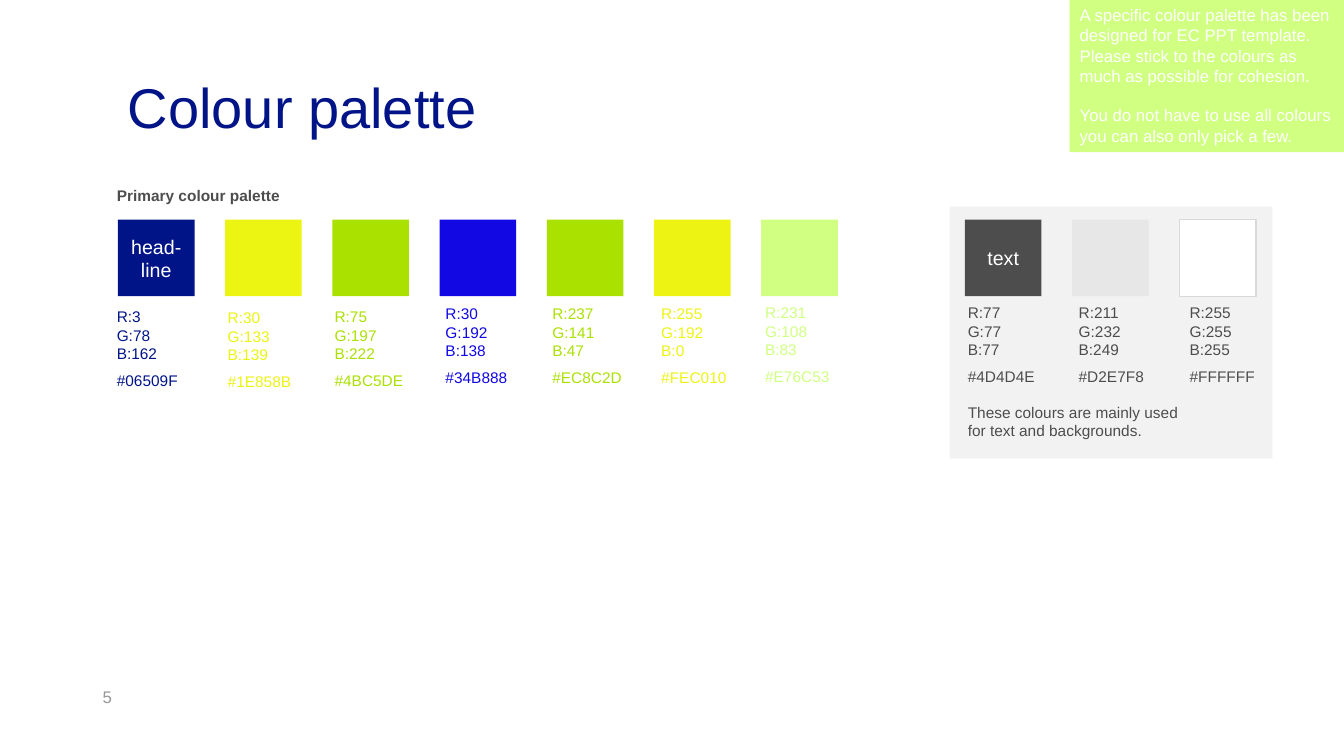
"""Build the colour palette slide."""
from pptx import Presentation
from pptx.dml.color import RGBColor
from pptx.enum.shapes import MSO_SHAPE
from pptx.enum.text import MSO_ANCHOR, PP_ALIGN
from pptx.util import Inches, Pt

RECTANGLE = MSO_SHAPE.RECTANGLE
TOP, MIDDLE, BOTTOM = MSO_ANCHOR.TOP, MSO_ANCHOR.MIDDLE, MSO_ANCHOR.BOTTOM
LEFT, CENTER = PP_ALIGN.LEFT, PP_ALIGN.CENTER

NAVY = RGBColor(0x00, 0x14, 0x88)
YELLOW = RGBColor(0xEC, 0xF4, 0x12)
BRIGHT_YELLOW = RGBColor(0xED, 0xF4, 0x13)
GREEN = RGBColor(0xAB, 0xE1, 0x00)
BLUE = RGBColor(0x11, 0x08, 0xE4)
LIME = RGBColor(0xD0, 0xFF, 0x82)
TEXT_GREY = RGBColor(0x4D, 0x4D, 0x4D)
PALE_GREY = RGBColor(0xE7, 0xE7, 0xE7)
PANEL_GREY = RGBColor(0xF2, 0xF2, 0xF2)
BORDER_GREY = RGBColor(0xD9, 0xD9, 0xD9)
NUMBER_GREY = RGBColor(0x97, 0x97, 0x97)
WHITE = RGBColor(0xFF, 0xFF, 0xFF)

FONT = "Arial"
SWATCH_TOP, SWATCH_SIZE = 2.18, 0.76
SWATCH_PITCH = 6.38 / 6
PRIMARY_LEFT, NEUTRAL_LEFT = 1.17, 9.57

PRIMARY = [
    (NAVY, "head-line", 1.06, 3.0, (3, 78, 162), "#06509F"),
    (YELLOW, "", 2.16, 3.01, (30, 133, 139), "#1E858B"),
    (GREEN, "", 3.22, 3.0, (75, 197, 222), "#4BC5DE"),
    (BLUE, "", 4.32, 2.97, (30, 192, 138), "#34B888"),
    (GREEN, "", 5.38, 2.97, (237, 141, 47), "#EC8C2D"),
    (BRIGHT_YELLOW, "", 6.46, 2.97, (255, 192, 0), "#FEC010"),
    (LIME, "", 7.49, 2.96, (231, 108, 83), "#E76C53"),
]
NEUTRAL = [
    (TEXT_GREY, "text", 9.5, 2.96, (77, 77, 77), "#4D4D4E"),
    (PALE_GREY, "", 10.6, 2.96, (211, 232, 249), "#D2E7F8"),
    (WHITE, "", 11.7, 2.96, (255, 255, 255), "#FFFFFF"),
]
NOTE = [
    "A specific colour palette has been designed for EC PPT template. "
    "Please stick to the colours as much as possible for cohesion.",
    "You do not have to use all colours you can also only pick a few.",
]


def write(shape, lines, size, color, align=LEFT, anchor=TOP, bold=False):
    """Fill a shape with evenly styled paragraphs and return them."""
    frame = shape.text_frame
    frame.word_wrap = True
    frame.vertical_anchor = anchor
    frame.text = "\n".join(lines)
    for paragraph in frame.paragraphs:
        paragraph.alignment = align
        font = paragraph.font
        font.name, font.size, font.bold = FONT, Pt(size), bold
        font.color.rgb = color
    return frame.paragraphs


def add_text(slide, area, lines, size, color, **style):
    """Add a wrapping text box and return its paragraphs."""
    box = slide.shapes.add_textbox(*map(Inches, area))
    return write(box, lines, size, color, **style)


def add_block(slide, area, fill, border=None):
    """Add a flat rectangle with an optional border."""
    block = slide.shapes.add_shape(RECTANGLE, *map(Inches, area))
    block.shadow.inherit = False
    block.fill.solid()
    block.fill.fore_color.rgb = fill
    if border is None:
        block.line.fill.background()
    else:
        block.line.color.rgb = border
        block.line.width = Pt(1)
    return block


def add_title(slide, title):
    """Add the bottom-anchored slide title."""
    box = slide.shapes.add_textbox(*map(Inches, (1.17, 0.54, 11.93, 0.86)))
    box.text_frame.margin_bottom = 0
    write(box, [title], 40, NAVY, anchor=BOTTOM)[0].line_spacing = 0.9


def add_palette(slide, left, colors, code_color=None):
    """Add a row of swatches with their colour codes below."""
    for index, (fill, label, code_left, code_top, rgb, code) in enumerate(colors):
        area = (left + index * SWATCH_PITCH, SWATCH_TOP, SWATCH_SIZE, SWATCH_SIZE)
        swatch = add_block(slide, area, fill, BORDER_GREY if fill == WHITE else None)
        if label:
            write(swatch, [label], 14, WHITE, align=CENTER, anchor=MIDDLE)
        lines = [f"{channel}:{value}" for channel, value in zip("RGB", rgb)]
        paragraphs = add_text(slide, (code_left, code_top, 1.22, 0.93),
                              lines + [code], 11, code_color or fill)
        paragraphs[-1].space_before = Pt(6)


def main():
    """Create and save the deck."""
    deck = Presentation()
    deck.slide_width, deck.slide_height = Inches(13.33), Inches(7.5)
    slide = deck.slides.add_slide(deck.slide_layouts[6])

    add_block(slide, (9.42, 2.05, 3.2, 2.5), PANEL_GREY)
    add_title(slide, "Colour palette")
    add_text(slide, (0.92, 6.71, 3, 0.4), ["5"], 12, NUMBER_GREY, anchor=MIDDLE)
    note = add_block(slide, (10.61, 0, 2.73, 1.51), LIME)
    write(note, NOTE, 12, WHITE)[-1].space_before = Pt(14)

    add_text(slide, (1.06, 1.8, 2.48, 0.29), ["Primary colour palette"],
             11, TEXT_GREY, bold=True)
    add_palette(slide, PRIMARY_LEFT, PRIMARY)
    add_palette(slide, NEUTRAL_LEFT, NEUTRAL, TEXT_GREY)
    add_text(slide, (9.5, 3.95, 2.48, 0.47),
             ["These colours are mainly used for text and backgrounds."],
             11, TEXT_GREY)
    deck.save("out.pptx")


if __name__ == "__main__":
    main()
